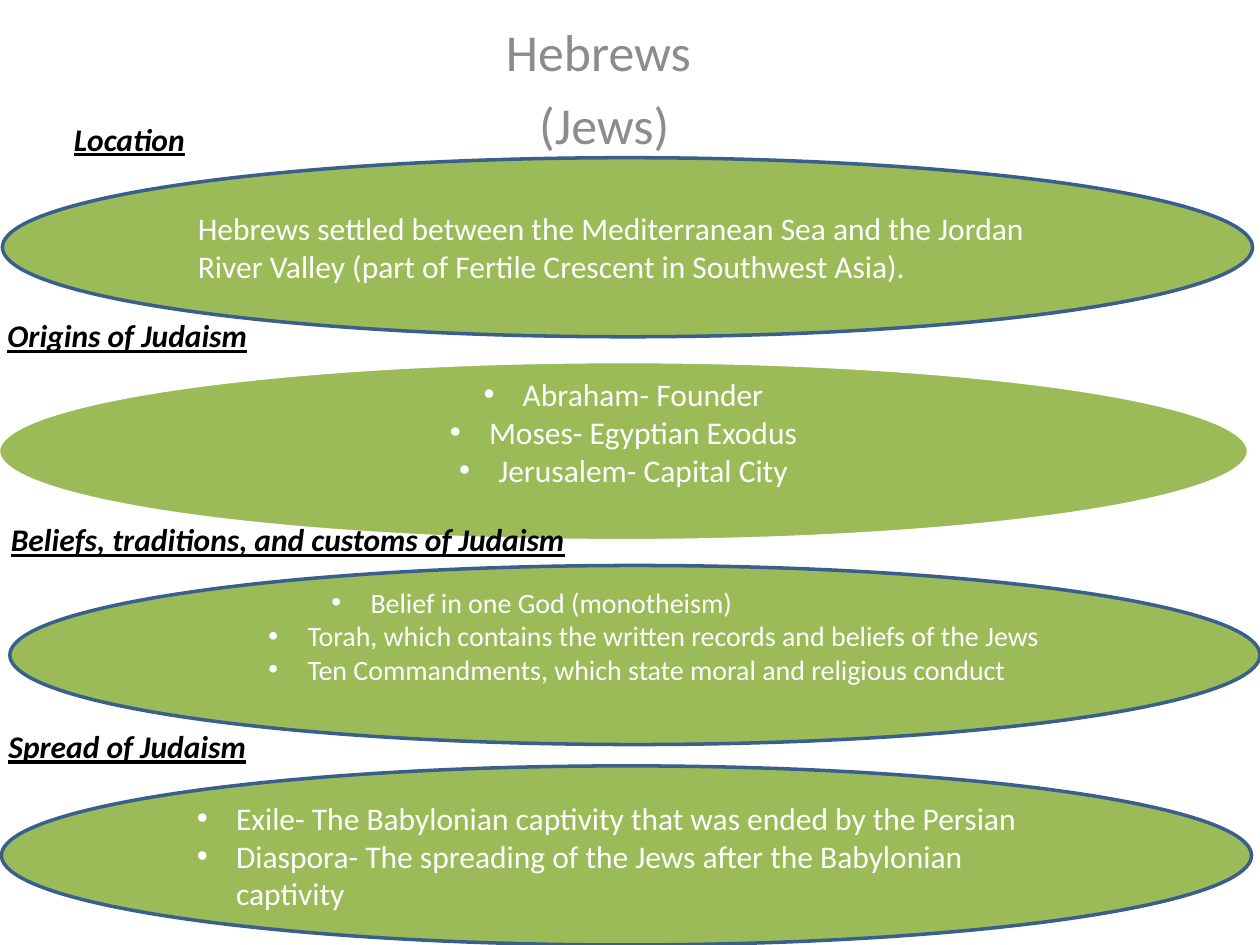
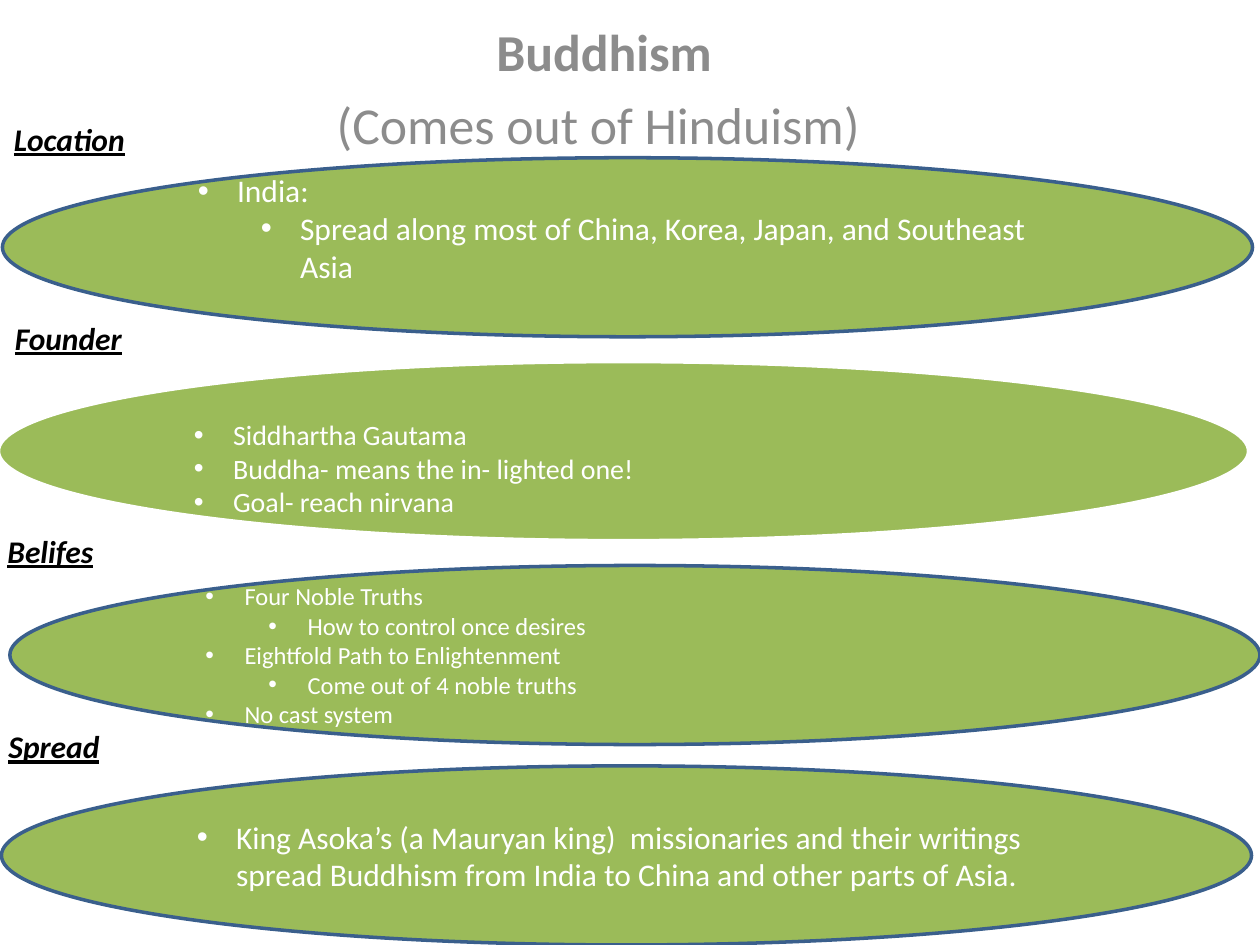
from dataclasses import dataclass

from lxml.etree import SubElement
from pptx import Presentation
from pptx.dml.color import RGBColor
from pptx.enum.shapes import MSO_SHAPE
from pptx.enum.text import MSO_ANCHOR, PP_ALIGN
from pptx.oxml.ns import qn
from pptx.util import Cm, Pt


@dataclass(frozen=True)
class Theme:
    font: str = "Calibri"
    green: str = "9BBB59"
    blue: str = "3A5F8C"
    white: str = "FFFFFF"
    black: str = "000000"
    gray: str = "8C8C8C"
    title: float = 29.6
    body: float = 18
    small: float = 16
    tiny: float = 14
    edge: float = 2


THEME = Theme()

# Left, top and outline of the four bands, in cm
BANDS = [
    (0.05, 3.18, THEME.blue),
    (-0.03, 7.29, THEME.white),
    (0.2, 11.4, THEME.blue),
    (0.03, 15.44, THEME.blue),
]
BAND_SIZE = Cm(25.2), Cm(3.61)
HANG, STEP = 0.79, 1.27  # bullet hang and indent per level
PAD = 0.13  # upper and lower text margin
LINE = 0.78  # one body line, used to push text off centre

# Each topic: label, label place (left, top, width), lines (level, text), format
HEBREWS = [
    ("Location", (1.24, 2.29, 2.77),
     [(None, "Hebrews settled between the Mediterranean Sea and the Jordan "
             "River Valley (part of Fertile Crescent in Southwest Asia).")], {}),
    ("Origins of Judaism", (-0.1, 6.25, 5.36),
     [(0, "Abraham- Founder"),
      (0, "Moses- Egyptian Exodus"),
      (0, "Jerusalem- Capital City")],
     {"align": PP_ALIGN.CENTER, "below": LINE}),
    ("Beliefs, traditions, and customs of Judaism", (-0.03, 10.36, 11.79),
     [(2, "Belief in one God (monotheism)"),
      (1, "Torah, which contains the written records and beliefs of the Jews"),
      (1, "Ten Commandments, which state moral and religious conduct")],
     {"size": THEME.small, "below": LINE}),
    ("Spread of Judaism", (-0.08, 14.53, 5.33),
     [(0, "Exile- The Babylonian captivity that was ended by the Persian"),
      (0, "Diaspora- The spreading of the Jews after the Babylonian captivity")],
     {}),
]
BUDDHISM = [
    ("Location", (0.03, 2.29, 2.77),
     [(0, "India:"),
      (1, "Spread along most of China, Korea, Japan, and Southeast Asia")],
     {"below": LINE}),
    ("Founder", (0.05, 6.3, 2.69),
     [(0, "Siddhartha Gautama"),
      (0, "Buddha- means the in- lighted one!"),
      (0, "Goal- reach nirvana")],
     {"size": THEME.small, "above": 0.69}),
    ("Belifes", (-0.1, 10.59, 2.26),
     [(0, "Four Noble Truths"),
      (1, "How to control once desires"),
      (0, "Eightfold Path to Enlightenment"),
      (1, "Come out of 4 noble truths"),
      (0, "No cast system")],
     {"size": THEME.tiny}),
    ("Spread", (-0.08, 14.53, 2.36),
     [(0, "King Asoka’s (a Mauryan king)  missionaries and their writings "
          "spread Buddhism from India to China and other parts of Asia.")], {}),
]


def color(code):
    return RGBColor.from_string(code)


def bullet(para, level):
    """Give a paragraph a round bullet with a hanging indent."""
    para.level = level
    props = para._p.get_or_add_pPr()
    props.set("marL", str(Cm(HANG + STEP * level)))
    props.set("indent", str(-Cm(HANG)))
    SubElement(props, qn("a:buFont")).set("typeface", "Arial")
    SubElement(props, qn("a:buChar")).set("char", "•")


def write(shape, lines, size=THEME.body, tint=THEME.white, align=PP_ALIGN.LEFT,
          anchor=MSO_ANCHOR.TOP, wrap=True, bold=False, slant=False,
          under=False, gap=0, above=0, below=0):
    """Fill a shape with (level, text) lines; a level of None has no bullet."""
    frame = shape.text_frame
    frame.word_wrap = wrap
    frame.vertical_anchor = anchor
    frame.margin_top, frame.margin_bottom = Cm(PAD + above), Cm(PAD + below)
    for i, (level, text) in enumerate(lines):
        para = frame.add_paragraph() if i else frame.paragraphs[0]
        para.alignment = align
        if i and gap:
            para.space_before = Pt(gap)
        if level is not None:
            bullet(para, level)
        run = para.add_run()
        run.text = text
        font = run.font
        font.name, font.size = THEME.font, Pt(size)
        font.bold, font.italic, font.underline = bold, slant, under
        font.color.rgb = color(tint)
    return frame


def band(slide, spot, lines, style):
    left, top, edge = spot
    oval = slide.shapes.add_shape(MSO_SHAPE.OVAL, Cm(left), Cm(top), *BAND_SIZE)
    oval.shadow.inherit = False
    oval.fill.solid()
    oval.fill.fore_color.rgb = color(THEME.green)
    oval.line.color.rgb = color(edge)
    oval.line.width = Pt(THEME.edge)
    write(oval, lines, anchor=MSO_ANCHOR.MIDDLE, **style)


def label(slide, text, place):
    left, top, width = place
    box = slide.shapes.add_textbox(Cm(left), Cm(top), Cm(width), Cm(1.02))
    write(box, [(None, text)], tint=THEME.black, wrap=False,
          bold=True, slant=True, under=True)


def title(slide, head, tail, bold):
    box = slide.shapes.add_textbox(Cm(3.61), Cm(0.2), Cm(17.15), Cm(2.97))
    frame = write(box, [(None, head), (None, tail)], size=THEME.title,
                  tint=THEME.gray, align=PP_ALIGN.CENTER, gap=6, above=0.07)
    frame.paragraphs[0].runs[0].font.bold = bold


def page(deck, head, tail, topics, bold=False):
    slide = deck.slides.add_slide(deck.slide_layouts[6])
    title(slide, head, tail, bold)
    # Bands first, so that labels lie on top
    for spot, (_, _, lines, style) in zip(BANDS, topics):
        band(slide, spot, lines, style)
    for text, place, _, _ in topics:
        label(slide, text, place)


def main():
    deck = Presentation()
    deck.slide_width, deck.slide_height = Cm(25.4), Cm(19.05)
    page(deck, "Hebrews ", "(Jews)", HEBREWS)
    page(deck, "Buddhism", "(Comes out of Hinduism) ", BUDDHISM, bold=True)
    deck.save("out.pptx")


if __name__ == "__main__":
    main()
